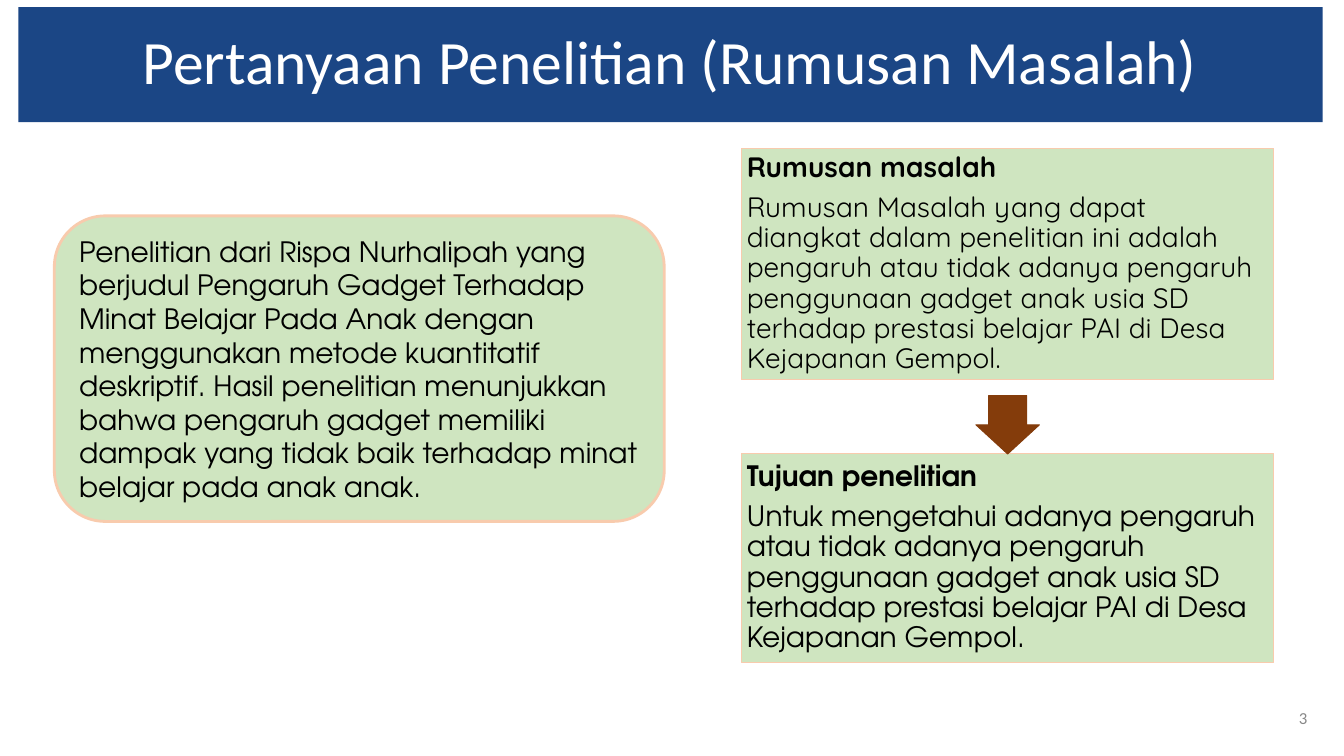
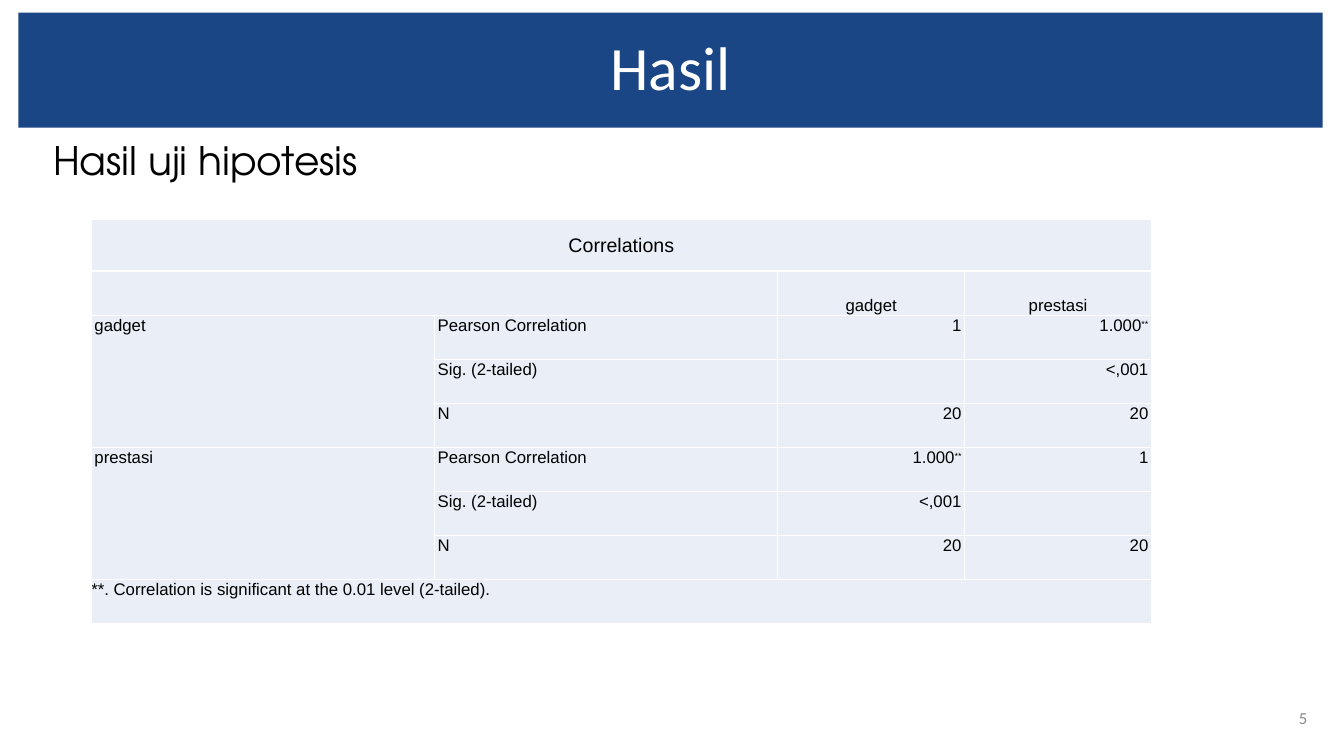
from dataclasses import dataclass
from typing import Optional

from lxml.etree import Element, SubElement
from pptx import Presentation
from pptx.dml.color import RGBColor
from pptx.enum.shapes import MSO_SHAPE as Shape
from pptx.enum.text import MSO_ANCHOR as Anchor, PP_ALIGN as Align
from pptx.oxml.ns import qn
from pptx.util import Cm, Pt

COLOURS = {
    "band": "1B4685",
    "card": "A9D18E",
    "edge": "F8CBAD",
    "arrow": "843C0B",
    "cell": "EAEFF7",
    "white": "FFFFFF",
    "text": "000000",
    "number": "888888",
}
HEAD_FONT, BODY_FONT, CARD_FONT, TABLE_FONT = "Calibri", "TeX Gyre Adventor", "Quicksand", "Arial"
BAND_LEFT, BAND_WIDTH, BAND_HEIGHT = 0.46, 32.87, 2.9


@dataclass(frozen=True)
class Style:
    font: str
    size: float
    colour: str = "text"
    bold: bool = False
    raised: bool = False


@dataclass(frozen=True)
class Card:
    top: float
    height: float
    font: str
    heading: str
    body: str


@dataclass(frozen=True)
class Entry:
    row: int
    column: int
    text: str
    align: Align = Align.LEFT
    anchor: Anchor = Anchor.TOP
    size: float = 12
    mark: str = ""
    margin: float = 0.08


TITLE = Style(HEAD_FONT, 44, "white")
NUMBER = Style(HEAD_FONT, 12, "number")

CARD_LEFT, CARD_WIDTH = 18.69, 13.41
CARDS = [
    Card(3.74, 5.82, CARD_FONT, "Rumusan masalah",
         "Rumusan Masalah yang dapat diangkat dalam penelitian ini adalah pengaruh atau tidak adanya "
         "pengaruh penggunaan gadget anak usia SD terhadap prestasi belajar PAI di Desa Kejapanan Gempol."),
    Card(11.43, 5.26, BODY_FONT, "Tujuan penelitian",
         "Untuk mengetahui adanya pengaruh atau tidak adanya pengaruh penggunaan gadget anak usia SD "
         "terhadap prestasi belajar PAI di Desa Kejapanan Gempol."),
]
STUDY = (
    "Penelitian dari Rispa Nurhalipah yang berjudul Pengaruh Gadget Terhadap Minat Belajar Pada Anak "
    "dengan menggunakan metode kuantitatif deskriptif. Hasil penelitian menunjukkan bahwa pengaruh "
    "gadget memiliki dampak yang tidak baik terhadap minat belajar pada anak anak."
)

VARIABLES = ["gadget", "prestasi"]
MEASURES = [("Pearson Correlation", "1", "1.000"), ("Sig. (2-tailed)", "", "<,001"), ("N", "20", "20")]
COLUMN_WIDTHS = [8.65, 8.65, 4.71, 4.71]
ROW_HEIGHTS = [1.31] + [1.11] * 8
MERGES = [(0, 0, 0, 3), (1, 0, 1, 1), (2, 0, 4, 0), (5, 0, 7, 0), (8, 0, 8, 3)]


def rgb(name: str) -> RGBColor:
    return RGBColor.from_string(COLOURS[name])


def add_span(para, text: str, style: Style) -> None:
    span = para.add_run()
    span.text = text
    font = span.font
    font.name, font.size, font.bold = style.font, Pt(style.size), style.bold
    font.color.rgb = rgb(style.colour)
    if style.raised:
        font._element.set("baseline", "30000")


def set_margins(frame, side: float, vertical: float) -> None:
    frame.margin_left = frame.margin_right = Cm(side)
    frame.margin_top = frame.margin_bottom = Cm(vertical)


def add_label(page, left: float, top: float, width: float, height: float, text: str,
              style: Style, align: Align, anchor: Anchor) -> None:
    box = page.shapes.add_textbox(Cm(left), Cm(top), Cm(width), Cm(height))
    frame = box.text_frame
    frame.word_wrap = True
    frame.vertical_anchor = anchor
    set_margins(frame, 0.25, 0.13)
    para = frame.paragraphs[0]
    para.alignment = align
    para.line_spacing = 0.9
    add_span(para, text, style)


def add_page(deck, title: str, band_top: float, number: str):
    page = deck.slides.add_slide(deck.slide_layouts[5])
    band = page.shapes.title
    band.left, band.top = Cm(BAND_LEFT), Cm(band_top)
    band.width, band.height = Cm(BAND_WIDTH), Cm(BAND_HEIGHT)
    band.fill.solid()
    band.fill.fore_color.rgb = rgb("band")
    frame = band.text_frame
    frame.vertical_anchor = Anchor.MIDDLE
    set_margins(frame, 0.25, 0.13)
    para = frame.paragraphs[0]
    para.alignment = Align.CENTER
    para.line_spacing = 0.9
    add_span(para, title, TITLE)
    add_label(page, 31.75, 17.6, 1.45, 1.02, number, NUMBER, Align.RIGHT, Anchor.MIDDLE)
    return page


def add_block(page, kind: Shape, left: float, top: float, width: float, height: float,
              fill: str, edge: str, weight: float, opacity: Optional[int] = None):
    block = page.shapes.add_shape(kind, Cm(left), Cm(top), Cm(width), Cm(height))
    block.shadow.inherit = False
    block.fill.solid()
    block.fill.fore_color.rgb = rgb(fill)
    block.line.color.rgb = rgb(edge)
    block.line.width = Pt(weight)
    if opacity is not None:
        colour = block.element.spPr.find(qn("a:solidFill"))[0]
        SubElement(colour, qn("a:alpha")).set("val", str(opacity * 1000))
    block.text_frame.word_wrap = True
    block.text_frame.vertical_anchor = Anchor.MIDDLE
    return block


def add_card(page, card: Card) -> None:
    block = add_block(page, Shape.RECTANGLE, CARD_LEFT, card.top, CARD_WIDTH, card.height,
                      "card", "edge", 0.75, 55)
    frame = block.text_frame
    set_margins(frame, 0.13, 0.13)
    heading, body = frame.paragraphs[0], frame.add_paragraph()
    for para, text, bold in ((heading, card.heading, True), (body, card.body, False)):
        para.alignment = Align.LEFT
        para.line_spacing = 0.9
        add_span(para, text, Style(card.font, 20, bold=bold))
    heading.space_after = Pt(7)


def build_question_page(deck) -> None:
    page = add_page(deck, "Pertanyaan Penelitian (Rumusan Masalah)", 0.18, "3")
    study = add_block(page, Shape.ROUNDED_RECTANGLE, 1.37, 5.44, 15.37, 7.7, "card", "edge", 2, 55)
    para = study.text_frame.paragraphs[0]
    para.alignment = Align.LEFT
    add_span(para, STUDY, Style(BODY_FONT, 20))
    for card in CARDS:
        add_card(page, card)
    width = 1.6
    arrow = add_block(page, Shape.DOWN_ARROW, CARD_LEFT + (CARD_WIDTH - width) / 2, 9.97, width, 1.47,
                      "arrow", "arrow", 0.75)
    arrow.adjustments[0], arrow.adjustments[1] = 0.6, 0.5


def correlation_entries() -> list[Entry]:
    entries = [
        Entry(0, 0, "Correlations", Align.CENTER, Anchor.MIDDLE, 14),
        Entry(8, 0, "**. Correlation is significant at the 0.01 level (2-tailed).", margin=0),
    ]
    for index, variable in enumerate(VARIABLES):
        first = 2 + index * len(MEASURES)
        entries.append(Entry(1, 2 + index, variable, Align.CENTER, Anchor.BOTTOM))
        entries.append(Entry(first, 0, variable))
        for row, (measure, own, other) in enumerate(MEASURES, first):
            entries.append(Entry(row, 1, measure))
            entries.append(Entry(row, 2 + index, own, Align.RIGHT))
            entries.append(Entry(row, 3 - index, other, Align.RIGHT, mark="**" if row == first else ""))
    return entries


def style_cell(cell) -> None:
    cell.fill.solid()
    cell.fill.fore_color.rgb = rgb("cell")
    set_margins(cell, 0.08, 0)
    properties = cell._tc.get_or_add_tcPr()
    for position, side in enumerate(("lnL", "lnR", "lnT", "lnB")):
        line = Element(qn(f"a:{side}"), w=str(Pt(1)))
        fill = SubElement(line, qn("a:solidFill"))
        SubElement(fill, qn("a:srgbClr")).set("val", COLOURS["white"])
        properties.insert(position, line)


def fill_cell(cell, entry: Entry) -> None:
    set_margins(cell, entry.margin, 0)
    cell.vertical_anchor = entry.anchor
    para = cell.text_frame.paragraphs[0]
    para.alignment = entry.align
    para.line_spacing = 1.07
    add_span(para, entry.text, Style(TABLE_FONT, entry.size))
    if entry.mark:
        add_span(para, entry.mark, Style(TABLE_FONT, 11, raised=True))


def add_correlations(page) -> None:
    table = page.shapes.add_table(len(ROW_HEIGHTS), len(COLUMN_WIDTHS), Cm(2.3), Cm(5.52),
                                  Cm(sum(COLUMN_WIDTHS)), Cm(sum(ROW_HEIGHTS))).table
    table.first_row = table.horz_banding = False
    for column, width in zip(table.columns, COLUMN_WIDTHS):
        column.width = Cm(width)
    for row, height in zip(table.rows, ROW_HEIGHTS):
        row.height = Cm(height)
    for cell in table.iter_cells():
        style_cell(cell)
    for top, left, bottom, right in MERGES:
        table.cell(top, left).merge(table.cell(bottom, right))
    for entry in correlation_entries():
        if entry.text:
            fill_cell(table.cell(entry.row, entry.column), entry)


def build_result_page(deck) -> None:
    page = add_page(deck, "Hasil", 0.32, "5")
    add_label(page, 1.09, 3.43, 31.6, 1.4, "Hasil uji hipotesis", Style(BODY_FONT, 28),
              Align.LEFT, Anchor.TOP)
    add_correlations(page)


def main() -> None:
    deck = Presentation()
    deck.slide_width, deck.slide_height = Cm(33.87), Cm(19.05)
    build_question_page(deck)
    build_result_page(deck)
    deck.save("out.pptx")


if __name__ == "__main__":
    main()
